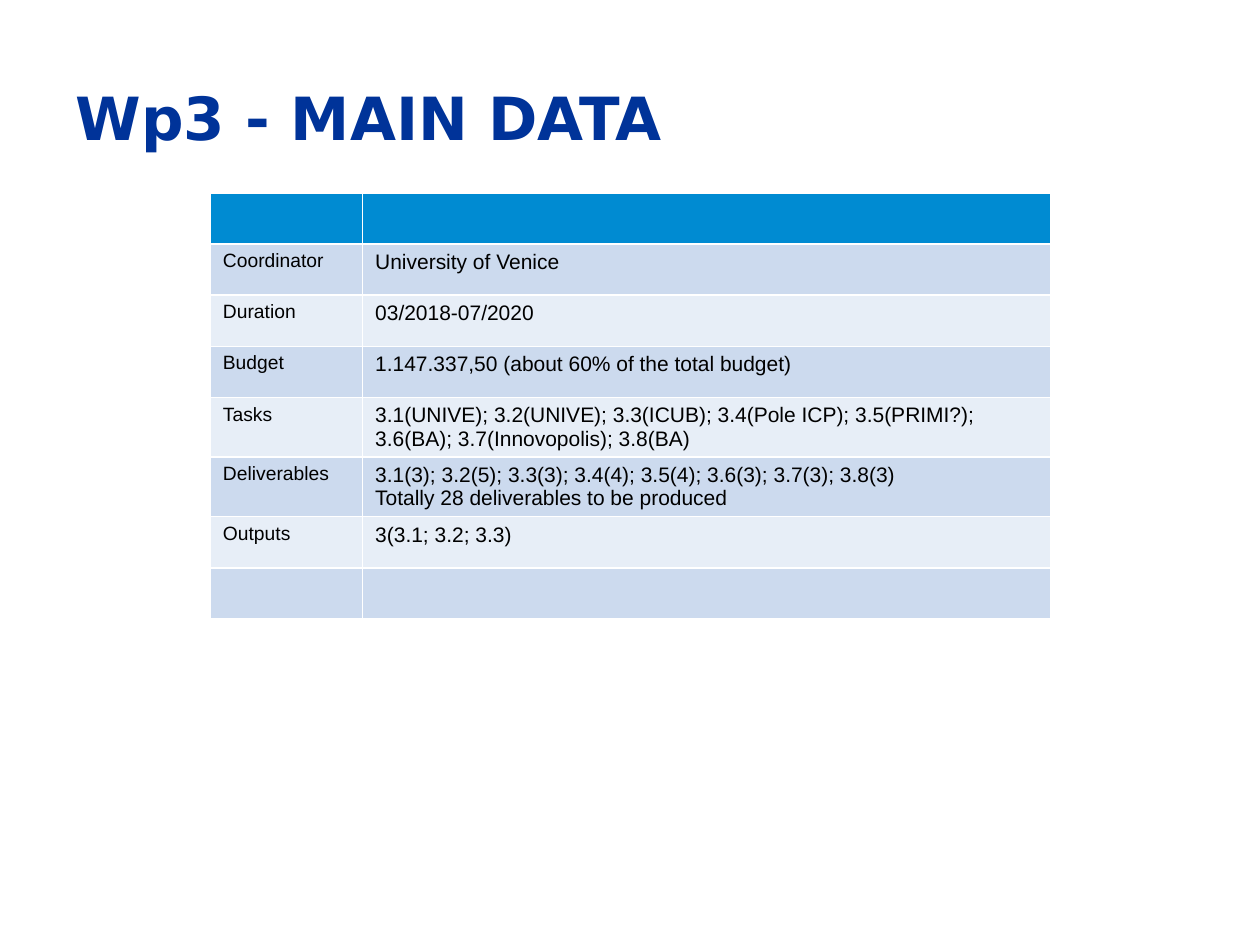
import pptx
import pptx.dml.color
import pptx.enum.text
import pptx.util

Cm, Pt = pptx.util.Cm, pptx.util.Pt
RGBColor = pptx.dml.color.RGBColor

TITLE_BLUE = RGBColor(0x00, 0x33, 0x99)
HEADER_BLUE = RGBColor(0x00, 0x8B, 0xD2)
BAND_DARK = RGBColor(0xCC, 0xDA, 0xEE)
BAND_LIGHT = RGBColor(0xE7, 0xEE, 0xF7)
BLACK = RGBColor(0x00, 0x00, 0x00)

ROWS = [
    ("", ""),
    ("Coordinator", "University of Venice"),
    ("Duration", "03/2018-07/2020"),
    ("Budget", "1.147.337,50 (about 60% of the total budget)"),
    ("Tasks", "3.1(UNIVE); 3.2(UNIVE); 3.3(ICUB); 3.4(Pole ICP); 3.5(PRIMI?); "
              "3.6(BA); 3.7(Innovopolis); 3.8(BA)"),
    ("Deliverables", "3.1(3); 3.2(5); 3.3(3); 3.4(4); 3.5(4); 3.6(3); 3.7(3); 3.8(3)\n"
                     "Totally 28 deliverables to be produced"),
    ("Outputs", "3(3.1; 3.2; 3.3)"),
    ("", ""),
]
COLUMN_WIDTHS = (Cm(3.07), Cm(13.87))
COLUMN_SIZES = (Pt(11), Pt(12))
ROW_HEIGHT = Cm(1.03)

presentation = pptx.Presentation()
presentation.slide_width, presentation.slide_height = Cm(25.4), Cm(19.05)
slide = presentation.slides.add_slide(presentation.slide_layouts[5])

# Title
title = slide.shapes.title
title.left, title.top, title.width, title.height = Cm(1.27), Cm(0.76), Cm(22.86), Cm(3.18)
title.text_frame.text = "Wp3 - MAIN DATA"
title.text_frame.vertical_anchor = pptx.enum.text.MSO_ANCHOR.MIDDLE
heading = title.text_frame.paragraphs[0]
heading.alignment = pptx.enum.text.PP_ALIGN.LEFT
heading_font = heading.runs[0].font
heading_font.name = "DejaVu Sans"
heading_font.size = Pt(34)
heading_font.bold = True
heading_font.color.rgb = TITLE_BLUE

# Work package data; the default table style supplies the white rules
work_package = slide.shapes.add_table(
    len(ROWS), len(COLUMN_WIDTHS), Cm(4.24), Cm(3.89),
    sum(COLUMN_WIDTHS), ROW_HEIGHT * len(ROWS)).table
for column, width in zip(work_package.columns, COLUMN_WIDTHS):
    column.width = width

for row_index, entries in enumerate(ROWS):
    work_package.rows[row_index].height = ROW_HEIGHT
    if row_index == 0:
        band = HEADER_BLUE
    else:
        band = BAND_DARK if row_index % 2 else BAND_LIGHT
    for column_index, entry in enumerate(entries):
        cell = work_package.cell(row_index, column_index)
        cell.fill.solid()
        cell.fill.fore_color.rgb = band
        if not entry:
            continue
        cell.text_frame.text = entry
        for paragraph in cell.text_frame.paragraphs:
            for run in paragraph.runs:
                run.font.name = "Arial"
                run.font.size = COLUMN_SIZES[column_index]
                run.font.color.rgb = BLACK

presentation.save("out.pptx")
